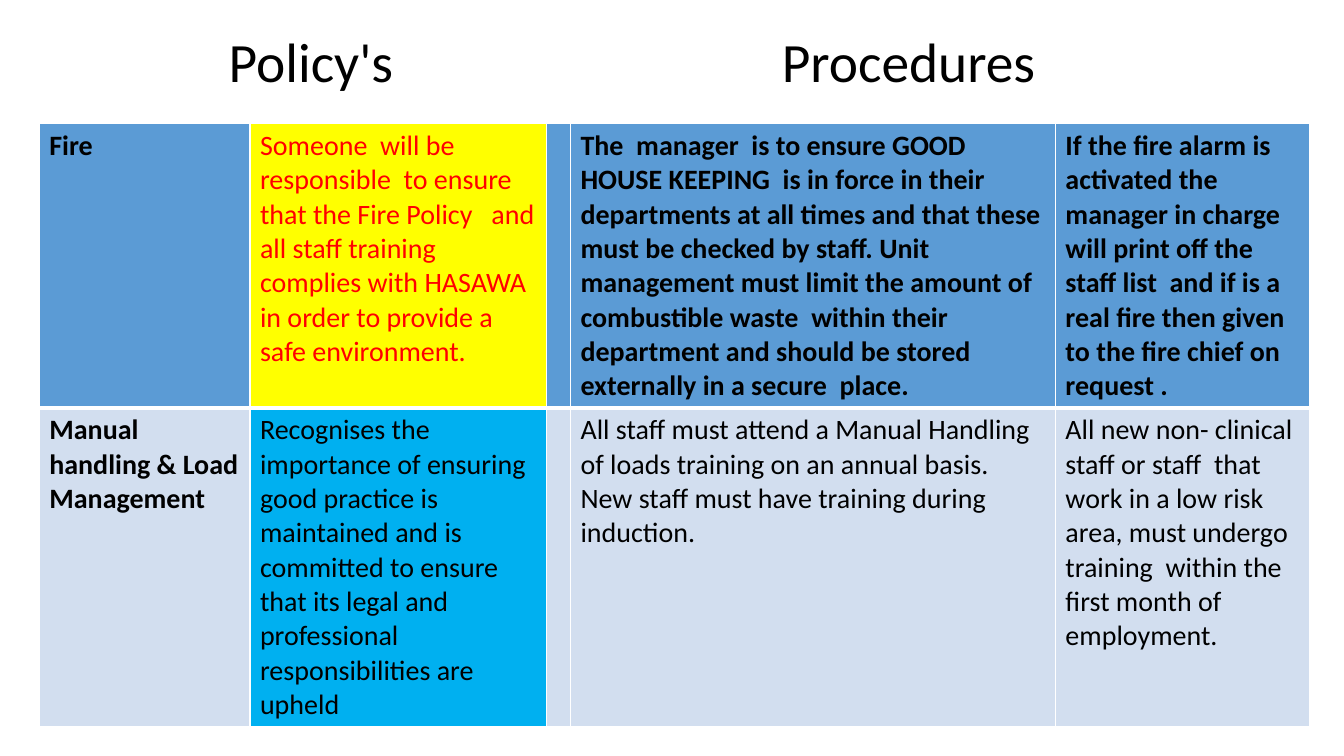
from dataclasses import dataclass

from lxml.etree import SubElement
from pptx import Presentation
from pptx.dml.color import RGBColor
from pptx.enum.text import MSO_ANCHOR, MSO_AUTO_SIZE, PP_ALIGN
from pptx.oxml.ns import qn
from pptx.util import Cm, Pt


@dataclass(frozen=True)
class Theme:
    """Hold the colours and type sizes of the slide."""
    font: str = "Calibri"
    title_size: float = 39.6
    body_size: float = 20
    black: str = "000000"
    white: str = "FFFFFF"
    red: str = "FF0000"
    blue: str = "5B9BD5"
    pale_blue: str = "D2DEEF"
    yellow: str = "FFFF00"
    cyan: str = "00B0F0"


@dataclass(frozen=True)
class Box:
    """Give a region's place and size in centimetres."""
    left: float
    top: float
    width: float
    height: float

    def lengths(self):
        """Return left, top, width and height as lengths."""
        return [Cm(value) for value in (self.left, self.top, self.width, self.height)]


@dataclass(frozen=True)
class Entry:
    """Describe the text and look of one table cell."""
    text: str
    fill: str
    bold: bool = False
    colour: str = Theme.black


THEME = Theme()
TITLE_BOX = Box(5.51, 0.76, 26.67, 1.75)
TABLE_BOX = Box(0.99, 3.12, 31.98, 13.41)
PROCEDURES_TAB = 13.94
COLUMN_WIDTHS = (5.31, 7.47, 0.58, 12.22, 6.4)
ROW_HEIGHTS = (6.2, 7.21)

FIRE = (
    Entry("Fire", THEME.blue, True),
    Entry("Someone  will be responsible  to ensure that the Fire Policy   and all staff "
          "training complies with HASAWA in order to provide a safe environment.",
          THEME.yellow, colour=THEME.red),
    Entry("", THEME.blue),
    Entry("The  manager  is to ensure GOOD HOUSE KEEPING  is in force in their departments "
          "at all times and that these must be checked by staff. Unit management must limit "
          "the amount of combustible waste  within their department and should be stored  "
          "externally in a secure  place.", THEME.blue, True),
    Entry("If the fire alarm is activated the manager in charge will print off the staff "
          "list  and if is a real fire then given to the fire chief on request .",
          THEME.blue, True),
)
MANUAL_HANDLING = (
    Entry("Manual handling & Load Management", THEME.pale_blue, True),
    Entry("Recognises the importance of ensuring good practice is maintained and is "
          "committed to ensure that its legal and professional responsibilities are upheld",
          THEME.cyan),
    Entry("", THEME.pale_blue),
    Entry("All staff must attend a Manual Handling of loads training on an annual basis.\n"
          "New staff must have training during induction.", THEME.pale_blue),
    Entry("All new non- clinical staff or staff  that work in a low risk area, must undergo "
          "training  within the first month of employment.", THEME.pale_blue),
)


def style_font(font, size, colour, bold=False):
    """Apply the theme's typeface with a size, colour and weight."""
    font.name = THEME.font
    font.size = Pt(size)
    font.bold = bold
    font.color.rgb = RGBColor.from_string(colour)


def add_border(cell, side, width):
    """Draw a white line along one side of a cell."""
    line = SubElement(cell._tc.get_or_add_tcPr(), qn(f"a:ln{side}"), w=str(Pt(width)))
    fill = SubElement(line, qn("a:solidFill"))
    SubElement(fill, qn("a:srgbClr"), val=THEME.white)


def fill_cell(cell, entry, top_width, bottom_width):
    """Write and format one table cell."""
    for side, width in (("L", 1), ("R", 1), ("T", top_width), ("B", bottom_width)):
        add_border(cell, side, width)
    cell.fill.solid()
    cell.fill.fore_color.rgb = RGBColor.from_string(entry.fill)
    cell.text = entry.text
    for para in cell.text_frame.paragraphs:
        style_font(para.font, THEME.body_size, entry.colour, entry.bold)


def place_title(page, box):
    """Set the two headings in the title placeholder, parted by a tab stop."""
    title = page.shapes.title
    title.left, title.top, title.width, title.height = box.lengths()
    frame = title.text_frame
    frame.text = "Policy's\tProcedures"
    frame.auto_size = MSO_AUTO_SIZE.NONE
    frame.vertical_anchor = MSO_ANCHOR.MIDDLE
    para = frame.paragraphs[0]
    para.alignment = PP_ALIGN.LEFT
    para.line_spacing = 0.9
    tabs = SubElement(para._p.get_or_add_pPr(), qn("a:tabLst"))
    SubElement(tabs, qn("a:tab"), pos=str(Cm(PROCEDURES_TAB)), algn="l")
    style_font(para.font, THEME.title_size, THEME.black)


def place_table(page, box, entries):
    """Build the table of policies and procedures."""
    table = page.shapes.add_table(len(entries), len(COLUMN_WIDTHS), *box.lengths()).table
    table.horz_banding = False
    for column, width in zip(table.columns, COLUMN_WIDTHS):
        column.width = Cm(width)
    for row, height in zip(table.rows, ROW_HEIGHTS):
        row.height = Cm(height)
    border_widths = ((1, 3), (3, 1))
    for row, row_entries, widths in zip(table.rows, entries, border_widths):
        for cell, entry in zip(row.cells, row_entries):
            fill_cell(cell, entry, *widths)


def main():
    """Create the deck and save it."""
    deck = Presentation()
    deck.slide_width, deck.slide_height = Cm(33.87), Cm(19.05)
    page = deck.slides.add_slide(deck.slide_layouts.get_by_name("Title Only"))
    place_title(page, TITLE_BOX)
    place_table(page, TABLE_BOX, (FIRE, MANUAL_HANDLING))
    deck.save("out.pptx")


if __name__ == "__main__":
    main()
